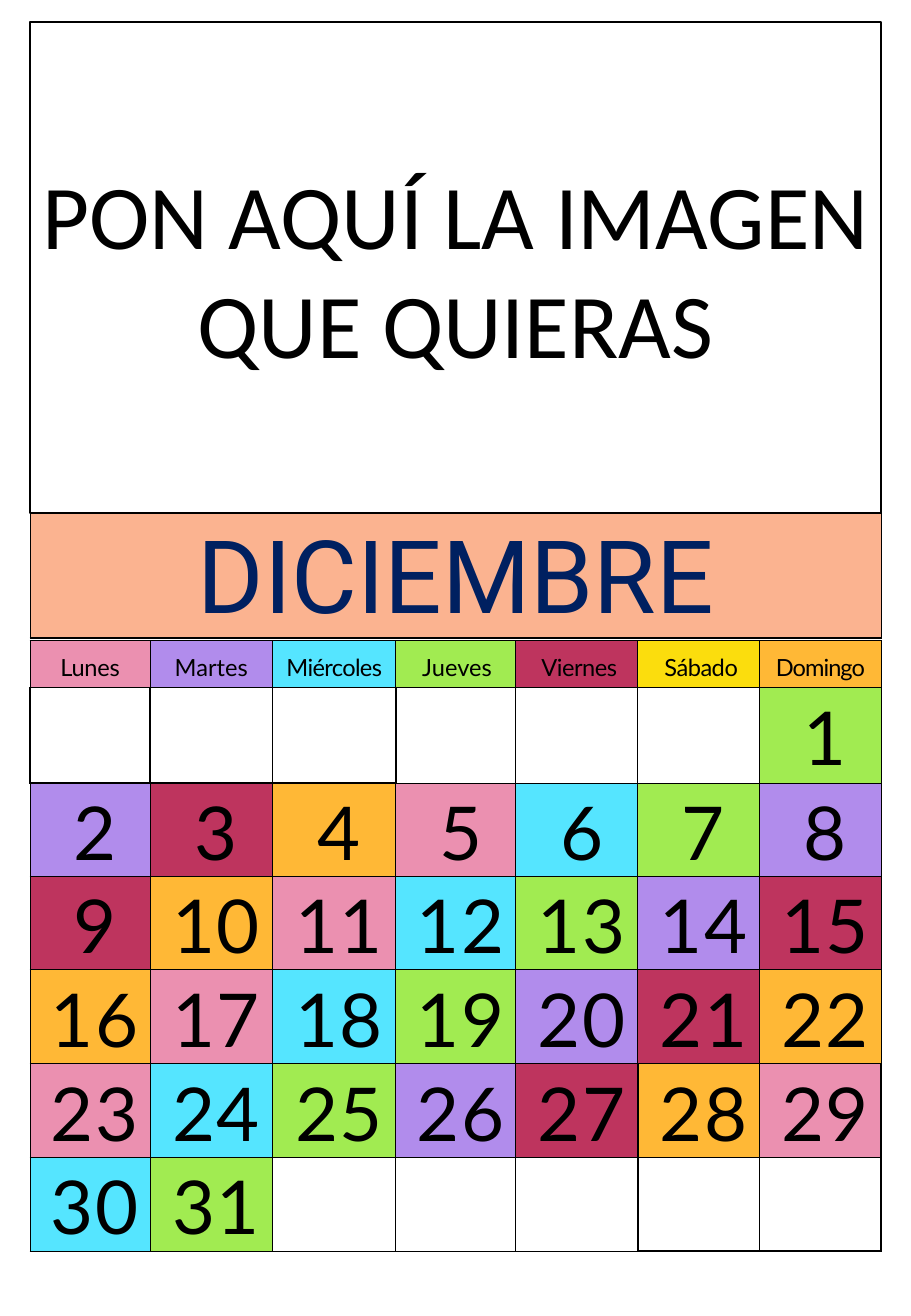
"""Build a December calendar page with a space for an image."""
from dataclasses import dataclass

from lxml.etree import SubElement
from pptx import Presentation
from pptx.dml.color import RGBColor
from pptx.enum.shapes import MSO_SHAPE
from pptx.enum.text import MSO_ANCHOR, PP_ALIGN
from pptx.oxml.ns import qn
from pptx.slide import Slide
from pptx.table import Table, _Cell
from pptx.text.text import _Paragraph
from pptx.util import Cm, Pt


@dataclass(frozen=True)
class Theme:
    ink: str = "000000"
    paper: str = "FFFFFF"
    navy: str = "002060"
    peach: str = "FBB390"
    pink: str = "EB90B0"
    cyan: str = "55E5FF"
    green: str = "A1EB51"
    purple: str = "B18CEC"
    red: str = "BE345E"
    orange: str = "FFB836"
    yellow: str = "FBDD0D"
    image: float = 54
    month: float = 60
    week: float = 14
    day: float = 44
    thin: float = 0.75
    thick: float = 1


@dataclass(frozen=True)
class Style:
    font: str
    size: float
    color: str
    before: float = 0
    top: float = 0


@dataclass(frozen=True)
class Weekday:
    name: str
    fill: str
    width: float
    indent: float = 0
    track: float = 0


THEME = Theme()
IMAGE = Style("Calibri", THEME.image, THEME.ink)
MONTH = Style("Roboto", THEME.month, THEME.navy, 4.2, 0.13)
WEEK = Style("Lato", THEME.week, THEME.ink, 4.2, 0.13)
DAY = Style("Lato", THEME.day, THEME.ink, 4.8, 0.08)
LEFT, WIDTH = 0.63, 17.8
DAYS = 31
BLANKS = 6
CYCLE = (THEME.pink, THEME.cyan, THEME.green, THEME.purple, THEME.red, THEME.orange)
WEEKDAYS = (
    Weekday("Lunes", THEME.pink, 2.51, track=-0.2),
    Weekday("Martes", THEME.purple, 2.56),
    Weekday("Miércoles", THEME.cyan, 2.58, track=-0.4),
    Weekday("Jueves", THEME.green, 2.51, 0.05),
    Weekday("Viernes", THEME.red, 2.55, 0.1, -0.3),
    Weekday("Sábado", THEME.yellow, 2.55, 0.1, -0.3),
    Weekday("Domingo", THEME.orange, 2.54, track=-0.6),
)
HEIGHTS = (0.98, 2, 1.93, 1.96, 1.96, 1.96, 1.96)
HEAVY = {(1, 0), (1, 1), (1, 2), (5, 5), (5, 6), (6, 5), (6, 6)}
SIDES = {"lnL": (0, -1), "lnR": (0, 1), "lnT": (-1, 0), "lnB": (1, 0)}


def write(line: _Paragraph, text: str, style: Style,
          indent: float = 0, track: float = 0) -> None:
    """Put centred, styled text in a paragraph."""
    line.text = text
    line.alignment = PP_ALIGN.CENTER
    line.space_before = Pt(style.before)
    line._p.get_or_add_pPr().set("marL", str(Cm(indent)))
    for run in line.runs:
        run.font.name = style.font
        run.font.size = Pt(style.size)
        run.font.color.rgb = RGBColor.from_string(style.color)
        run._r.get_or_add_rPr().set("spc", str(round(track * 100)))


def border(cell: _Cell, side: str, weight: float) -> None:
    """Draw one edge of a cell."""
    edge = SubElement(cell._tc.get_or_add_tcPr(), qn(f"a:{side}"), w=str(Pt(weight)))
    fill = SubElement(edge, qn("a:solidFill"))
    SubElement(fill, qn("a:srgbClr"), val=THEME.ink)


def paint(cell: _Cell, color: str, weights: dict[str, float], top: float) -> None:
    """Give a cell its edges, fill and margins."""
    for side, weight in weights.items():
        border(cell, side, weight)
    cell.fill.solid()
    cell.fill.fore_color.rgb = RGBColor.from_string(color)
    cell.vertical_anchor = MSO_ANCHOR.MIDDLE
    cell.margin_left = cell.margin_right = cell.margin_bottom = 0
    cell.margin_top = Cm(top)


def edges(row: int, col: int) -> dict[str, float]:
    """Find edge weights, shared between neighbouring cells."""
    return {
        side: THEME.thick if HEAVY & {(row, col), (row + down, col + right)} else THEME.thin
        for side, (down, right) in SIDES.items()
    }


def grid(slide: Slide, top: float, widths: list[float], heights: list[float]) -> Table:
    """Add a plain table with the given columns and rows."""
    table = slide.shapes.add_table(
        len(heights), len(widths), Cm(LEFT), Cm(top), Cm(WIDTH), Cm(sum(heights))).table
    table.first_row = table.horz_banding = False
    for col, width in zip(table.columns, widths):
        col.width = Cm(width)
    for row, height in zip(table.rows, heights):
        row.height = Cm(height)
    return table


def banner(slide: Slide) -> None:
    """Add the band with the month."""
    cell = grid(slide, 10.72, [WIDTH], [2.62]).cell(0, 0)
    weights = dict.fromkeys(SIDES, THEME.thin) | {"lnB": THEME.thick}
    paint(cell, THEME.peach, weights, MONTH.top)
    write(cell.text_frame.paragraphs[0], "DICIEMBRE", MONTH)


def month(slide: Slide) -> None:
    """Add the weekdays and the numbered days."""
    table = grid(slide, 13.39, [item.width for item in WEEKDAYS], list(HEIGHTS))
    for col, item in enumerate(WEEKDAYS):
        head = table.cell(0, col)
        paint(head, item.fill, edges(0, col), WEEK.top)
        write(head.text_frame.paragraphs[0], item.name, WEEK, item.indent, item.track)
        for row in range(1, len(HEIGHTS)):
            cell = table.cell(row, col)
            day = (row - 1) * len(WEEKDAYS) + col + 1 - BLANKS
            shown = 1 <= day <= DAYS
            color = CYCLE[(day + 1) % len(CYCLE)] if shown else THEME.paper
            paint(cell, color, edges(row, col), DAY.top)
            if shown:
                write(cell.text_frame.paragraphs[0], str(day), DAY, 0.2, 1)


def frame(slide: Slide) -> None:
    """Add the box kept for an image."""
    box = slide.shapes.add_shape(
        MSO_SHAPE.RECTANGLE, Cm(LEFT), Cm(0.46), Cm(WIDTH), Cm(10.26))
    box.shadow.inherit = False
    box.fill.solid()
    box.fill.fore_color.rgb = RGBColor.from_string(THEME.paper)
    box.line.color.rgb = RGBColor.from_string(THEME.ink)
    box.line.width = Pt(THEME.thick)
    box.text_frame.word_wrap = True
    box.text_frame.vertical_anchor = MSO_ANCHOR.MIDDLE
    write(box.text_frame.paragraphs[0], "PON AQUÍ LA IMAGEN QUE QUIERAS", IMAGE)


def main() -> None:
    """Build and save the page."""
    deck = Presentation()
    deck.slide_width, deck.slide_height = Cm(19.05), Cm(27.51)
    slide = deck.slides.add_slide(deck.slide_layouts[6])
    banner(slide)
    month(slide)
    frame(slide)
    deck.save("out.pptx")


if __name__ == "__main__":
    main()
